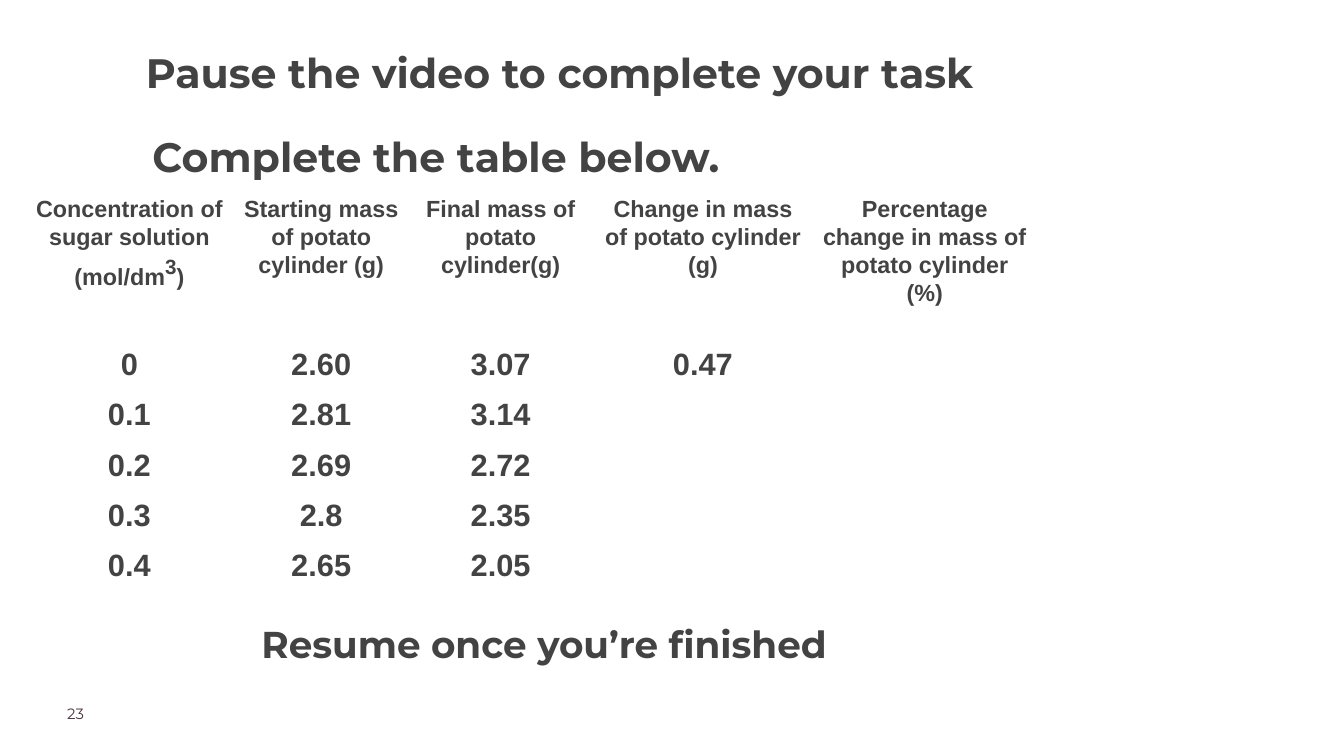
import pptx
import pptx.util
import pptx.dml.color
import pptx.enum.shapes
import pptx.enum.text
import pptx.oxml
import pptx.oxml.ns

Inches, Pt = pptx.util.Inches, pptx.util.Pt
Align, Anchor = pptx.enum.text.PP_ALIGN, pptx.enum.text.MSO_ANCHOR

# Content
TITLE = "Pause the video to complete your task"
TASK = "Complete the table below."
CLOSING = "Resume once you’re finished"
PAGE_NUMBER = "23"
HEADERS = [
    ["Concentration of sugar solution (mol/dm", "3", ")"],  # middle part is raised
    ["Starting mass of potato cylinder (g)"],
    ["Final mass of potato cylinder(g)"],
    ["Change in mass of potato cylinder (g)"],
    ["Percentage change in mass of potato cylinder (%)"],
]
RESULTS = [
    ["0", "2.60", "3.07", "0.47", ""],
    ["0.1", "2.81", "3.14", "", ""],
    ["0.2", "2.69", "2.72", "", ""],
    ["0.3", "2.8", "2.35", "", ""],
    ["0.4", "2.65", "2.05", "", ""],
]
COLUMN_WIDTHS = [3.11, 2.6, 2.74, 3.28, 3.32]
HEADER_HEIGHT, RESULT_HEIGHT = 2.24, 0.73

# Theme
THEME = {
    "ink": "434343", "number": "4B3241", "paper": "FFFFFF",
    "heading": {"name": "Montserrat", "size": Pt(44), "bold": True},
    "closing": {"name": "Montserrat", "size": Pt(40), "bold": True},
    "page": {"name": "Montserrat", "size": Pt(16), "bold": False},
    "header": {"name": "Arial", "size": Pt(25), "bold": True},
    "raised": {"name": "Arial", "size": Pt(38), "bold": True},
    "result": {"name": "Arial", "size": Pt(33), "bold": True},
    "border": Pt(2.25),
}


def color(key):
    return pptx.dml.color.RGBColor.from_string(THEME[key])


def style(font, role, ink="ink"):
    for name, value in THEME[role].items():
        setattr(font, name, value)
    font.color.rgb = color(ink)


def write(box, text, role, ink="ink", inset=0, spacing=1.15):
    frame = box.text_frame
    margins = dict.fromkeys(
        ["margin_left", "margin_top", "margin_right", "margin_bottom"], Inches(inset))
    settings = {"word_wrap": True, "vertical_anchor": Anchor.TOP,
                "auto_size": pptx.enum.text.MSO_AUTO_SIZE.NONE, **margins}
    for name, value in settings.items():
        setattr(frame, name, value)
    para = frame.paragraphs[0]
    para.alignment, para.line_spacing = Align.LEFT, spacing
    span = para.add_run()
    span.text = text
    style(span.font, role, ink)


def add_borders(cell):
    properties = cell._tc.get_or_add_tcPr()
    for side in ("lnL", "lnR", "lnT", "lnB"):
        properties.append(pptx.oxml.parse_xml(
            f'<a:{side} {pptx.oxml.ns.nsdecls("a")} w="{THEME["border"]}"><a:solidFill>'
            f'<a:srgbClr val="{THEME["paper"]}"/></a:solidFill></a:{side}>'))


def fill_cell(cell, parts, role):
    add_borders(cell)
    cell.fill.background()
    for side in ("left", "top", "right", "bottom"):
        setattr(cell, f"margin_{side}", Inches(0.1))
    para = cell.text_frame.paragraphs[0]
    para.alignment, para.line_spacing = Align.CENTER, 1.07
    for index, part in enumerate(parts):
        if part:
            span = para.add_run()
            span.text = part
            raised = index == 1
            style(span.font, "raised" if raised else role)
            if raised:
                span.font._element.set("baseline", "30000")


def main():
    deck = pptx.Presentation()
    deck.slide_width, deck.slide_height = Inches(20), Inches(11.25)
    page = deck.slides.add_slide(deck.slide_layouts[5])
    page.background.fill.solid()
    page.background.fill.fore_color.rgb = color("paper")

    # Title
    title = page.shapes.title
    place = {"left": 2.17, "top": 0.6, "width": 15.94, "height": 1.88}
    for name, value in place.items():
        setattr(title, name, Inches(value))
    write(title, TITLE, "heading")

    # Task line
    task = page.shapes.add_shape(
        pptx.enum.shapes.MSO_SHAPE.RECTANGLE,
        Inches(2.17), Inches(1.75), Inches(12.14), Inches(0.83))
    task.shadow.inherit = False
    task.fill.solid()
    task.fill.fore_color.rgb = color("paper")
    task.line.fill.background()
    write(task, TASK, "heading", inset=0.1)

    # Closing line and page number
    closing = page.shapes.add_textbox(Inches(3.89), Inches(9.14), Inches(9.12), Inches(0.93))
    write(closing, CLOSING, "closing")
    number = page.shapes.add_textbox(Inches(1), Inches(10.48), Inches(1.57), Inches(0.39))
    write(number, PAGE_NUMBER, "page", "number", spacing=1)

    # Results table
    heights = [HEADER_HEIGHT] + [RESULT_HEIGHT] * len(RESULTS)
    table = page.shapes.add_table(
        len(heights), len(COLUMN_WIDTHS), Inches(0.37), Inches(2.8),
        Inches(sum(COLUMN_WIDTHS)), Inches(sum(heights))).table
    table.first_row = table.horz_banding = False
    for column, width in zip(table.columns, COLUMN_WIDTHS):
        column.width = Inches(width)
    for row, height in zip(table.rows, heights):
        row.height = Inches(height)
    rows = [HEADERS] + [[[value] for value in result] for result in RESULTS]
    for r, row in enumerate(rows):
        for c, parts in enumerate(row):
            fill_cell(table.cell(r, c), parts, "result" if r else "header")

    deck.save("out.pptx")


if __name__ == "__main__":
    main()
